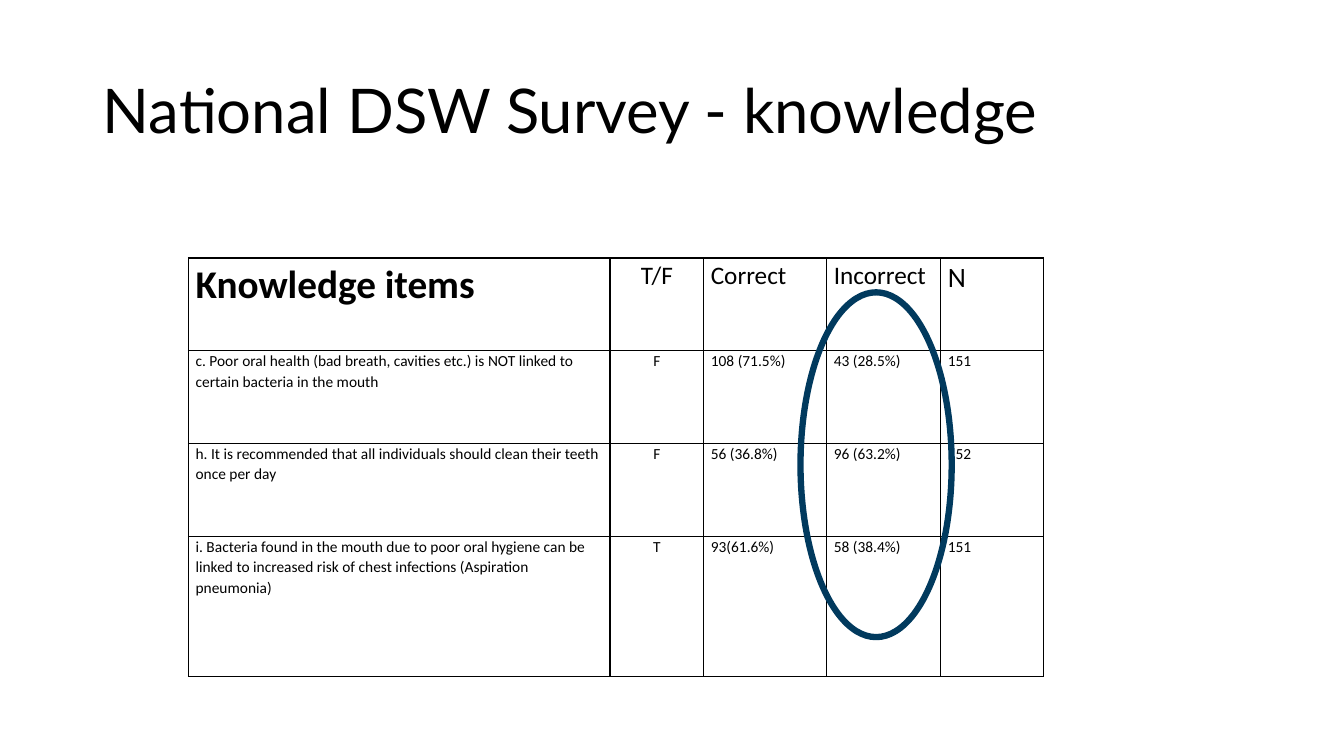
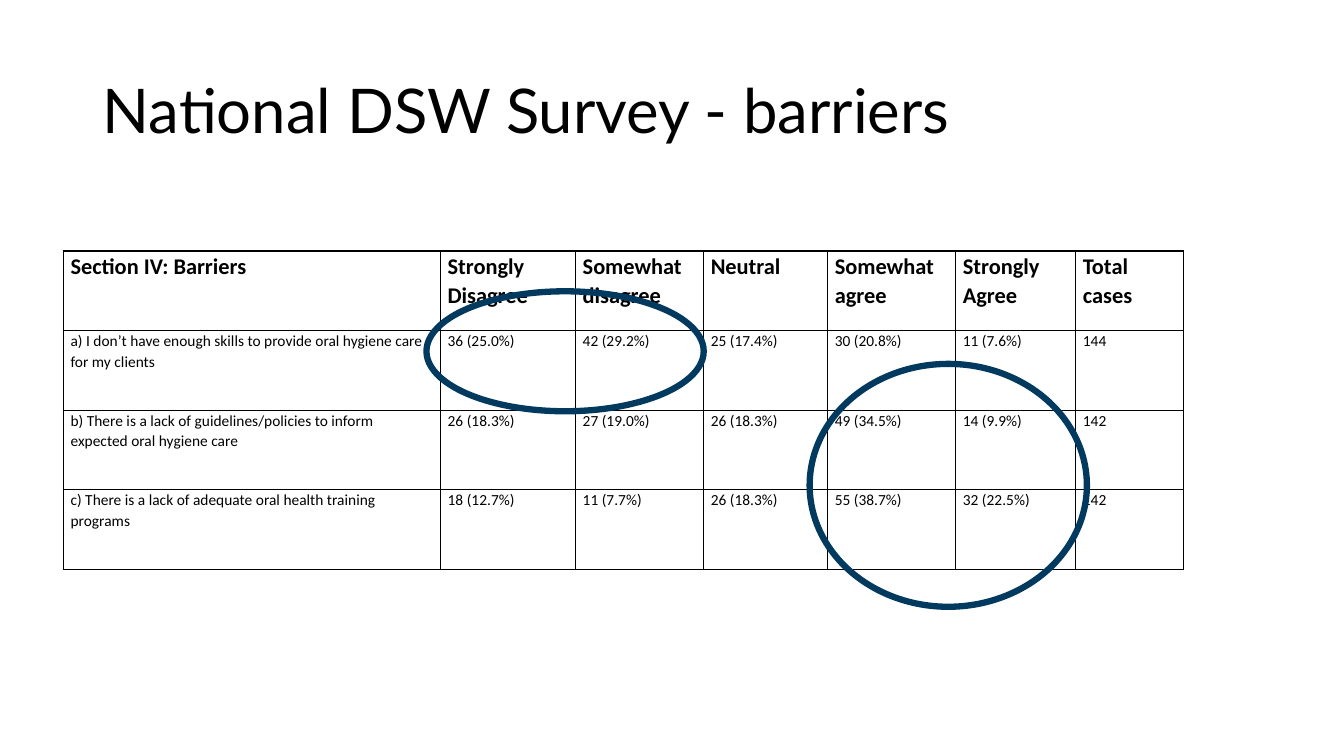
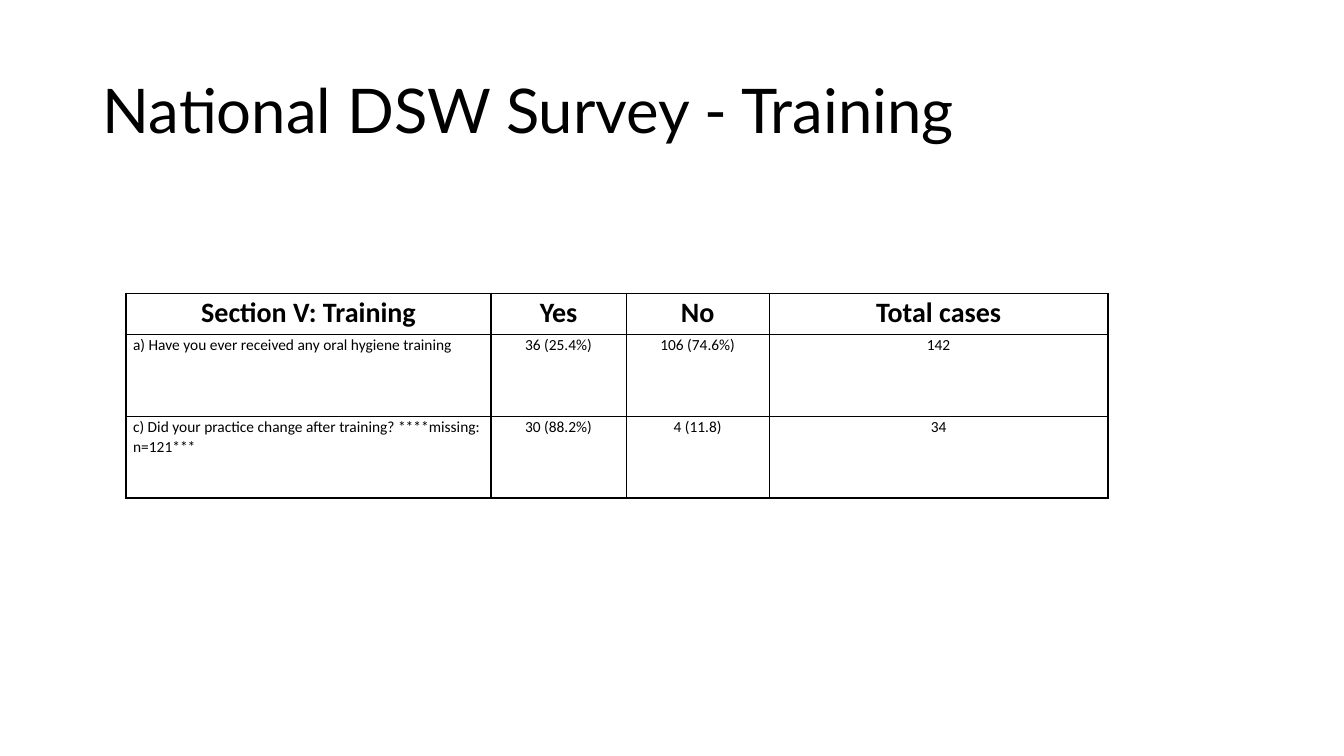
from lxml.etree import SubElement
from pptx import Presentation
from pptx.dml.color import RGBColor
from pptx.enum.shapes import MSO_SHAPE
from pptx.enum.text import MSO_ANCHOR, PP_ALIGN
from pptx.oxml.ns import qn
from pptx.util import Inches, Pt

COLORS = {"text": "000000", "border": "000000", "highlight": "013A5E"}
TITLE_BOX = (6.9, 5.33, 86.27, 19.33)
TITLE_FONT = {"name": "Lato", "size": Pt(44), "bold": False}
BODY_FONT = {"name": "Calibri", "size": Pt(11), "bold": False}
CELL_PARAGRAPH = {"line_spacing": 1.07, "space_after": Pt(8)}
CELL_MARGINS = {"margin_left": Inches(0.07), "margin_right": Inches(0.07),
                "margin_top": 0, "margin_bottom": 0}
ALIGNMENTS = {"l": PP_ALIGN.LEFT, "c": PP_ALIGN.CENTER}

# Positions, columns and rows are percentages of the slide's width and height.
# "header" and "body" hold one alignment letter per column.
SLIDES = [
    {
        "title": "National DSW Survey - knowledge",
        "corner": (14.03, 34.13),
        "columns": [31.36, 6.98, 9.15, 8.48, 7.65],
        "rows": [12.27, 12.27, 12.27, 18.53],
        "header": "lclll",
        "body": "lclll",
        "header_sizes": [28, 18, 18, 18, 20],
        "header_bold": [True, False, False, False, False],
        "cells": [
            ["Knowledge items", "T/F", "Correct", "Incorrect", "N"],
            ["c. Poor oral health (bad breath, cavities etc.) is NOT linked to "
             "certain bacteria in the mouth", "F", "108 (71.5%)", "43 (28.5%)", "151"],
            ["h. It is recommended that all individuals should clean their teeth "
             "once per day", "F", "56 (36.8%)", "96 (63.2%)", "152"],
            ["i. Bacteria found in the mouth due to poor oral hygiene can be linked "
             "to increased risk of chest infections (Aspiration pneumonia)",
             "T", "93(61.6%)", "58 (38.4%)", "151"],
        ],
        "highlights": [(59.56, 38.67, 11.25, 45.6)],
    },
    {
        "title": "National DSW Survey - barriers",
        "corner": (4.73, 33.2),
        "columns": [28.06, 10.05, 9.53, 9.23, 9.53, 8.93, 8.03],
        "rows": [10.53] * 4,
        "header": "l" * 7,
        "body": "l" * 7,
        "header_sizes": [16] * 7,
        "header_bold": [True] * 7,
        "cells": [
            ["Section IV: Barriers", "Strongly Disagree", "Somewhat disagree",
             "Neutral", "Somewhat agree", "Strongly Agree", "Total cases"],
            ["a) I don’t have enough skills to provide oral hygiene care for my clients",
             "36 (25.0%)", "42 (29.2%)", "25 (17.4%)", "30 (20.8%)", "11 (7.6%)", "144"],
            ["b) There is a lack of guidelines/policies to inform expected oral "
             "hygiene care",
             "26 (18.3%)", "27 (19.0%)", "26 (18.3%)", "49 (34.5%)", "14 (9.9%)", "142"],
            ["c) There is a lack of adequate oral health training programs",
             "18 (12.7%)", "11 (7.7%)", "26 (18.3%)", "55 (38.7%)", "32 (22.5%)", "142"],
        ],
        "highlights": [(60.24, 48.13, 20.63, 32.13), (31.73, 38.53, 20.63, 15.87)],
    },
    {
        "title": "National DSW Survey - Training",
        "corner": (9.38, 38.8),
        "columns": [27.16, 10.05, 10.65, 25.21],
        "rows": [5.47, 10.8, 10.8],
        "header": "cccc",
        "body": "lccc",
        "header_sizes": [20] * 4,
        "header_bold": [True] * 4,
        "cells": [
            ["Section V: Training", "Yes", "No", "Total cases"],
            ["a) Have you ever received any oral hygiene training",
             "36 (25.4%)", "106 (74.6%)", "142"],
            ["c) Did your practice change after training? ****missing: n=121***",
             "30 (88.2%)", "4 (11.8)", "34"],
        ],
        "highlights": [],
    },
]

presentation = Presentation()
presentation.slide_width = Inches(13.33)
presentation.slide_height = Inches(7.5)


def place(*shares):
    """Turn percentages (left, top, width, height) into slide lengths."""
    sides = (presentation.slide_width, presentation.slide_height) * 2
    return [round(side * share / 100) for side, share in zip(sides, shares)]


def write(text_frame, text, font_format, paragraph_format):
    paragraph = text_frame.paragraphs[0]
    paragraph.text = text
    for target, values in ((paragraph, paragraph_format),
                           (paragraph.runs[0].font, font_format)):
        for name, value in values.items():
            setattr(target, name, value)
    paragraph.runs[0].font.color.rgb = RGBColor.from_string(COLORS["text"])


for content in SLIDES:
    slide = presentation.slides.add_slide(presentation.slide_layouts[6])

    title_frame = slide.shapes.add_textbox(*place(*TITLE_BOX)).text_frame
    title_frame.word_wrap = True
    title_frame.vertical_anchor = MSO_ANCHOR.MIDDLE
    write(title_frame, content["title"], TITLE_FONT, {"line_spacing": 0.9})

    columns, rows = content["columns"], content["rows"]
    table = slide.shapes.add_table(
        len(rows), len(columns),
        *place(*content["corner"], sum(columns), sum(rows))).table
    table.first_row = table.horz_banding = False
    for column, share in zip(table.columns, columns):
        column.width = place(share)[0]
    for row, share in zip(table.rows, rows):
        row.height = place(0, share)[1]

    for row_index, texts in enumerate(content["cells"]):
        for column_index, text in enumerate(texts):
            cell = table.cell(row_index, column_index)
            for name, value in CELL_MARGINS.items():
                setattr(cell, name, value)
            font_format, letters = BODY_FONT, content["body"]
            if row_index == 0:
                letters = content["header"]
                font_format = {**BODY_FONT,
                               "size": Pt(content["header_sizes"][column_index]),
                               "bold": content["header_bold"][column_index]}
            alignment = ALIGNMENTS[letters[column_index]]
            write(cell.text_frame, text, font_format,
                  {**CELL_PARAGRAPH, "alignment": alignment})

            # Borders come before the fill in the cell's properties.
            properties = cell._tc.get_or_add_tcPr()
            for edge in ("a:lnL", "a:lnR", "a:lnT", "a:lnB"):
                line = SubElement(properties, qn(edge), w=str(Pt(1)))
                fill = SubElement(line, qn("a:solidFill"))
                SubElement(fill, qn("a:srgbClr"), val=COLORS["border"])
            cell.fill.background()

    for box in content["highlights"]:
        ellipse = slide.shapes.add_shape(MSO_SHAPE.OVAL, *place(*box))
        ellipse.shadow.inherit = False
        ellipse.fill.background()
        ellipse.line.color.rgb = RGBColor.from_string(COLORS["highlight"])
        ellipse.line.width = Pt(4.5)

presentation.save("out.pptx")
